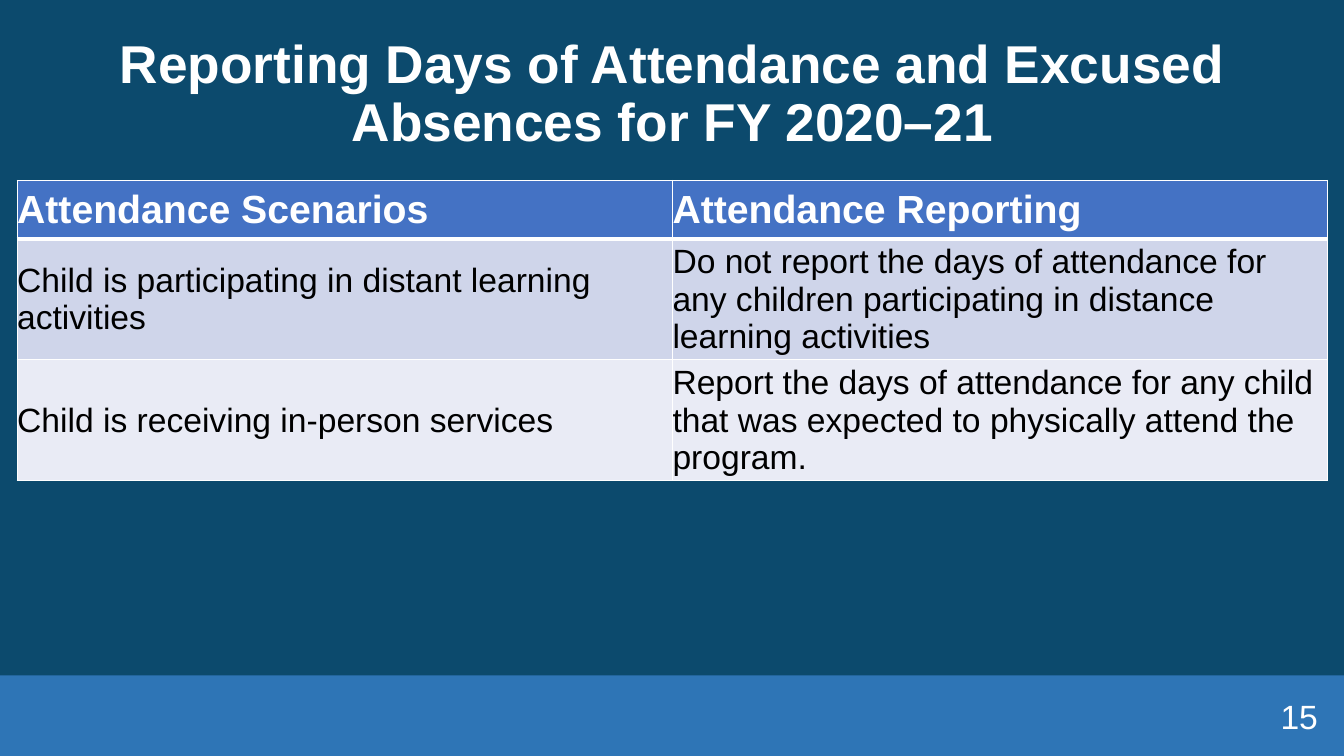
from lxml import etree
from pptx import Presentation
from pptx import util as u
from pptx.dml.color import RGBColor
from pptx.enum import shapes, text
from pptx.oxml import ns

NAVY = RGBColor(0x0C, 0x4A, 0x6D)
BAND_BLUE = RGBColor(0x2E, 0x75, 0xB6)
HEADER_BLUE = RGBColor(0x44, 0x72, 0xC4)
ROW_DARK = RGBColor(0xCF, 0xD5, 0xEA)
ROW_LIGHT = RGBColor(0xE9, 0xEB, 0xF5)
WHITE = RGBColor(0xFF, 0xFF, 0xFF)
BLACK = RGBColor(0, 0, 0)

ATTENDANCE_ROWS = [
    ("Attendance Scenarios", "Attendance Reporting"),
    ("Child is participating in distant learning activities",
     "Do not report the days of attendance for any children participating "
     "in distance learning activities"),
    ("Child is receiving in-person services",
     "Report the days of attendance for any child that was expected to "
     "physically attend the program."),
]
ROW_HEIGHTS = (0.58, 1.11, 1.11)
ROW_FILLS = (HEADER_BLUE, ROW_DARK, ROW_LIGHT)


def write_text(frame, content, size=24, color=WHITE, bold=False,
               align=text.PP_ALIGN.LEFT, spacing=None, font="Arial"):
    paragraph = frame.paragraphs[0]
    paragraph.alignment = align
    if spacing:
        paragraph.line_spacing = spacing
    run = paragraph.add_run()
    run.text = content
    run.font.name = font
    run.font.size = u.Pt(size)
    run.font.bold = bold
    run.font.color.rgb = color


class SlideBuilder:
    def __init__(self, slide, background):
        self.slide = slide
        slide.background.fill.solid()
        slide.background.fill.fore_color.rgb = background

    def band(self, left, top, width, height, color):
        shape = self.slide.shapes.add_shape(
            shapes.MSO_SHAPE.RECTANGLE, *map(u.Inches, (left, top, width, height)))
        shape.shadow.inherit = False
        shape.fill.solid()
        shape.fill.fore_color.rgb = color
        shape.line.fill.background()

    def text_box(self, left, top, width, height, content, **style):
        shape = self.slide.shapes.add_textbox(
            *map(u.Inches, (left, top, width, height)))
        shape.text_frame.word_wrap = True
        shape.text_frame.vertical_anchor = text.MSO_ANCHOR.MIDDLE
        write_text(shape.text_frame, content, **style)

    def table(self, left, top, width, rows, heights, fills):
        columns = len(rows[0])
        table = self.slide.shapes.add_table(
            len(rows), columns,
            *map(u.Inches, (left, top, width, sum(heights)))).table
        for column in table.columns:
            column.width = u.Inches(width / columns)
        for index, (contents, height, fill) in enumerate(zip(rows, heights, fills)):
            table.rows[index].height = u.Inches(height)
            header = index == 0
            for cell, content in zip(table.rows[index].cells, contents):
                cell.margin_left = cell.margin_right = 0
                cell.margin_top = cell.margin_bottom = 0
                cell.vertical_anchor = text.MSO_ANCHOR.MIDDLE
                # The rule under the header is three points on both sides
                self.borders(cell, top=3 if index == 1 else 1,
                             bottom=3 if header else 1)
                cell.fill.solid()
                cell.fill.fore_color.rgb = fill
                write_text(cell.text_frame, content, size=28 if header else 24,
                           color=WHITE if header else BLACK, bold=header)

    def borders(self, cell, top, bottom):
        properties = cell._tc.get_or_add_tcPr()
        for tag, points in (("lnL", 1), ("lnR", 1), ("lnT", top), ("lnB", bottom)):
            line = etree.SubElement(properties, ns.qn(f"a:{tag}"), w=str(u.Pt(points)))
            fill = etree.SubElement(line, ns.qn("a:solidFill"))
            etree.SubElement(fill, ns.qn("a:srgbClr"), val=str(WHITE))


def main():
    presentation = Presentation()
    presentation.slide_width = u.Inches(13.33)
    presentation.slide_height = u.Inches(7.5)
    slide = presentation.slides.add_slide(presentation.slide_layouts[6])
    builder = SlideBuilder(slide, NAVY)

    # Footer band
    builder.band(0, 6.7, 13.33, 0.8, BAND_BLUE)

    # Title
    builder.text_box(0.17, 0.22, 13, 1.45,
                     "Reporting Days of Attendance and Excused Absences for FY 2020–21",
                     size=38, bold=True, align=text.PP_ALIGN.CENTER, spacing=0.9)

    # Attendance table
    builder.table(0.17, 1.79, 13, ATTENDANCE_ROWS, ROW_HEIGHTS, ROW_FILLS)

    # Slide number
    builder.text_box(10.17, 6.9, 3, 0.4, "15", align=text.PP_ALIGN.RIGHT)

    presentation.save("out.pptx")


if __name__ == "__main__":
    main()
